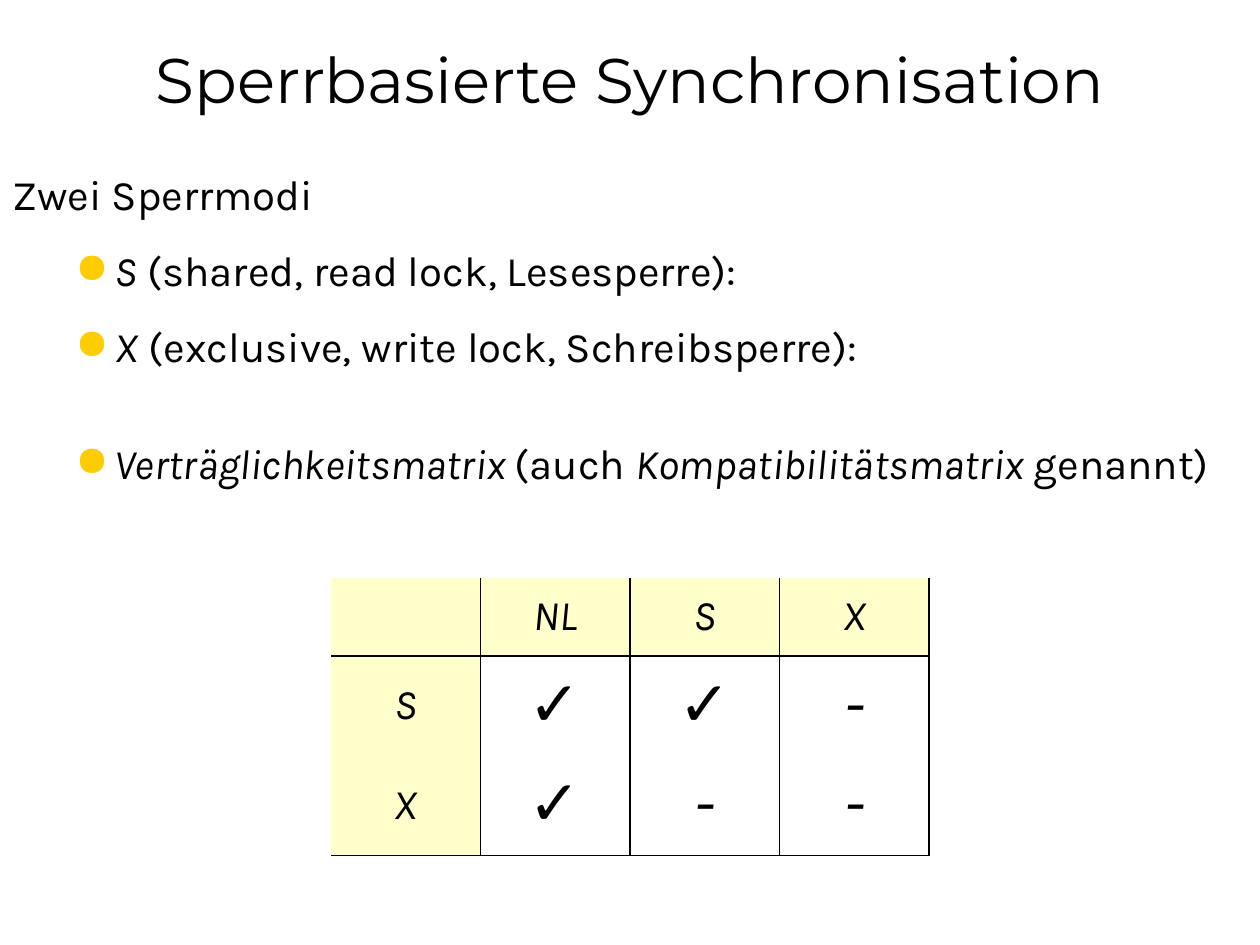
from dataclasses import dataclass

from lxml import etree
from pptx import Presentation
from pptx.dml.color import RGBColor
from pptx.enum import text
from pptx.oxml import ns
from pptx.util import Pt


@dataclass(frozen=True)
class Theme:
    ink: str = "000000"
    bullet: str = "FFCC00"
    header: str = "FFFFCC"
    title_font: str = "Montserrat"
    body_font: str = "Karla"
    title_size: int = 36
    body_size: int = 24
    mark_size: int = 36
    spacing: float = 0.9
    before: int = 5
    after: float = 12.6


class Deck:
    def __init__(self, theme, width, height):
        self.theme = theme
        self.prs = Presentation()
        self.prs.slide_width, self.prs.slide_height = Pt(width), Pt(height)
        self.slide = self.prs.slides.add_slide(self.prs.slide_layouts[6])

    def font(self, r, size, name=None, italic=False):
        r.font.name = name or self.theme.body_font
        r.font.size = Pt(size)
        r.font.italic = italic
        r.font.color.rgb = RGBColor.from_string(self.theme.ink)

    def box(self, x, y, w, h, anchor):
        tf = self.slide.shapes.add_textbox(Pt(x), Pt(y), Pt(w), Pt(h)).text_frame
        tf.word_wrap = True
        tf.vertical_anchor = anchor
        return tf

    def title(self, words, *place):
        p = self.box(*place, text.MSO_ANCHOR.MIDDLE).paragraphs[0]
        p.text = words
        p.alignment = text.PP_ALIGN.CENTER
        self.font(p.runs[0], self.theme.title_size, self.theme.title_font)

    def bullet(self, p, margin, hang):
        pPr = p._p.get_or_add_pPr()
        pPr.set("marL", str(Pt(margin)))
        pPr.set("indent", str(-Pt(hang)))
        color = etree.SubElement(pPr, ns.qn("a:buClr"))
        etree.SubElement(color, ns.qn("a:srgbClr"), val=self.theme.bullet)
        etree.SubElement(pPr, ns.qn("a:buChar"), char="●")

    def body(self, items, *place):
        """Each item: is it a bullet, space after, runs as (words, italic)."""
        tf = self.box(*place, text.MSO_ANCHOR.TOP)
        for i, (bulleted, after, runs) in enumerate(items):
            p = tf.add_paragraph() if i else tf.paragraphs[0]
            p.line_spacing = self.theme.spacing
            p.space_before = Pt(self.theme.before if i else 0)
            p.space_after = Pt(after)
            if bulleted:
                p.level = 1
                self.bullet(p, 58.5, 22.5)
            for words, italic in runs:
                r = p.add_run()
                r.text = words
                self.font(r, self.theme.body_size, italic=italic)

    def borders(self, cell, sides):
        """Draw the named sides (L, R, T, B) and clear the others."""
        tcPr = cell._tc.get_or_add_tcPr()
        for i, side in enumerate("LRTB"):
            ln = etree.Element(ns.qn(f"a:ln{side}"), w=str(Pt(1)))
            if side in sides:
                fill = etree.SubElement(ln, ns.qn("a:solidFill"))
                etree.SubElement(fill, ns.qn("a:srgbClr"), val=self.theme.ink)
            else:
                etree.SubElement(ln, ns.qn("a:noFill"))
            tcPr.insert(i, ln)

    def matrix(self, rows, x, y, col_width, heights):
        n_rows, n_cols = len(rows), len(rows[0])
        table = self.slide.shapes.add_table(
            n_rows, n_cols, Pt(x), Pt(y), Pt(col_width * n_cols), Pt(sum(heights))
        ).table
        table.first_row = table.horz_banding = False
        for col in table.columns:
            col.width = Pt(col_width)
        for i, values in enumerate(rows):
            table.rows[i].height = Pt(heights[i])
            for j, value in enumerate(values):
                cell = table.cell(i, j)
                head = i == 0 or j == 0
                if head:
                    cell.fill.solid()
                    cell.fill.fore_color.rgb = RGBColor.from_string(self.theme.header)
                else:
                    cell.fill.background()
                # Rules between columns, below the header and at the foot
                sides = "R" + ("L" if j else "")
                sides += "T" if i == 1 else ""
                sides += "B" if i in (0, n_rows - 1) else ""
                self.borders(cell, sides)
                cell.vertical_anchor = text.MSO_ANCHOR.MIDDLE
                p = cell.text_frame.paragraphs[0]
                p.text = value
                p.alignment = text.PP_ALIGN.CENTER
                p.line_spacing = self.theme.spacing
                for r in p.runs:
                    size = self.theme.body_size if head else self.theme.mark_size
                    self.font(r, size, italic=True)


def main():
    theme = Theme()
    deck = Deck(theme, 720, 540)

    # Title
    deck.title("Sperrbasierte Synchronisation", 0, 0, 720, 90)

    # Lock modes
    deck.body([
        (False, theme.after, [("Zwei Sperrmodi", False)]),
        (True, theme.after, [("S", True), (" (shared, read lock, Lesesperre):", False)]),
        (True, 36, [("X", True), (" (exclusive, write lock, Schreibsperre):", False)]),
        (True, 0, [("Verträglichkeitsmatrix ", True), ("(auch ", False),
                   ("Kompatibilitätsmatrix", True), (" genannt)", False)]),
    ], 0, 96, 720, 228)

    # Compatibility matrix
    deck.matrix([
        ["", "NL", "S", "X"],
        ["S", "✓", "✓", "-"],
        ["X", "✓", "-", "-"],
    ], 189, 330, 85.5, [45, 57, 57])

    deck.prs.save("out.pptx")


if __name__ == "__main__":
    main()
